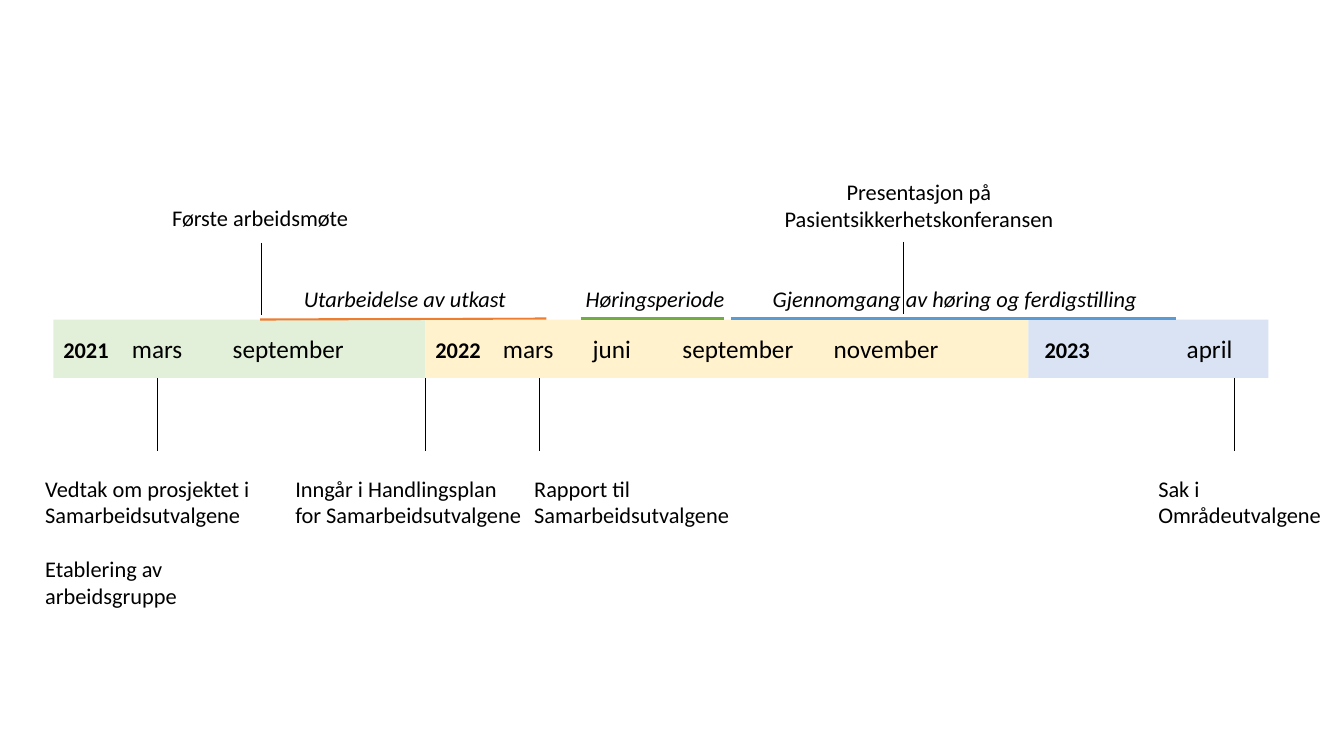
"""Build a project timeline slide running from 2021 to 2023."""
from dataclasses import dataclass
from typing import Optional

from lxml.etree import SubElement
from pptx import Presentation
from pptx.dml.color import RGBColor
from pptx.enum.shapes import MSO_CONNECTOR as Connector, MSO_SHAPE as Shape
from pptx.enum.text import MSO_ANCHOR as Anchor, PP_ALIGN as Align
from pptx.oxml.ns import qn
from pptx.slide import Slide
from pptx.util import Inches, Pt

BLACK = RGBColor(0x00, 0x00, 0x00)
WHITE = RGBColor(0xFF, 0xFF, 0xFF)
PALE_GREEN = RGBColor(0xE2, 0xF0, 0xD9)
PALE_YELLOW = RGBColor(0xFF, 0xF2, 0xCC)
PALE_BLUE = RGBColor(0xDA, 0xE3, 0xF3)
ORANGE = RGBColor(0xED, 0x7D, 0x31)
GREEN = RGBColor(0x70, 0xAD, 0x47)
BLUE = RGBColor(0x5B, 0x9B, 0xD5)

FONT = "Calibri"
BAND_TOP, BAND_HEIGHT = 3.17, 0.58
BAND_BOTTOM = BAND_TOP + BAND_HEIGHT
TICK_LENGTH = 0.72
PHASE_TOP, PHASE_LINE_Y = 2.78, 3.16
BELOW_TOP = 4.66


@dataclass(frozen=True)
class Year:
    name: str
    left: float
    width: float
    fill: RGBColor
    months: dict[str, float]
    inset: float = 0.1


@dataclass(frozen=True)
class Label:
    paragraphs: tuple[str, ...]
    left: float
    top: float
    width: float
    height: float
    align: Align = Align.LEFT
    italic: bool = False
    gap: float = 0
    fill: Optional[RGBColor] = None


@dataclass(frozen=True)
class Rule:
    start: tuple[float, float]
    end: tuple[float, float]
    color: RGBColor = BLACK
    weight: float = 0.5


YEARS = [
    Year("2021", 0.53, 3.69, PALE_GREEN, {"mars": 0.68, "september": 1.68}),
    Year("2022", 4.22, 5.98, PALE_YELLOW,
         {"mars": 0.67, "juni": 1.56, "september": 2.45, "november": 3.95}),
    Year("2023", 10.2, 2.38, PALE_BLUE, {"april": 1.41}, inset=0.16),
]

MILESTONES = [
    Label(("Vedtak\u00a0om prosjektet i Samarbeidsutvalgene", "Etablering av arbeidsgruppe"),
          0.35, BELOW_TOP, 2.29, 1.45, gap=19.2),
    Label(("Inngår i Handlingsplan \vfor Samarbeidsutvalgene",), 2.83, BELOW_TOP, 2.52, 0.91),
    Label(("Rapport til", "Samarbeidsutvalgene"), 5.2, BELOW_TOP, 2.43, 0.64),
    Label(("Sak i Områdeutvalgene",), 11.39, BELOW_TOP, 1.84, 0.64),
    Label(("Presentasjon på Pasientsikkerhetskonferansen",), 7.63, 1.72, 2.97, 0.64, Align.CENTER),
    Label(("Første arbeidsmøte",), 1.54, 1.98, 2.08, 0.37, Align.CENTER),
]

TICKS = [
    Rule((x, top), (x, top + TICK_LENGTH))
    for x, top in [(1.56, BAND_BOTTOM), (4.22, BAND_BOTTOM), (5.35, BAND_BOTTOM),
                   (12.24, BAND_BOTTOM), (2.59, 2.41), (8.96, 2.4)]
]

PHASE_LINES = [
    Rule((2.58, BAND_TOP), (5.42, PHASE_LINE_Y), ORANGE, 1.5),
    Rule((5.76, PHASE_LINE_Y), (7.18, PHASE_LINE_Y), GREEN, 1.5),
    Rule((7.25, PHASE_LINE_Y), (11.66, PHASE_LINE_Y), BLUE, 1.5),
]

PHASES = [
    Label(("Utarbeidelse\u00a0av utkast",), 2.74, PHASE_TOP, 2.55, 0.37, Align.CENTER, True, fill=WHITE),
    Label(("Høringsperiode",), 5.71, PHASE_TOP, 1.91, 0.37, italic=True),
    Label(("Gjennomgang av høring og ferdigstilling",), 7.06, PHASE_TOP, 4.82, 0.37, Align.CENTER, True),
]


def draw_year(slide: Slide, year: Year) -> None:
    band = slide.shapes.add_shape(Shape.RECTANGLE, Inches(year.left), Inches(BAND_TOP),
                                  Inches(year.width), Inches(BAND_HEIGHT))
    band.shadow.inherit = False
    band.fill.solid()
    band.fill.fore_color.rgb = year.fill
    band.line.fill.background()
    frame = band.text_frame
    frame.word_wrap = True
    frame.vertical_anchor = Anchor.MIDDLE
    frame.margin_left = Inches(year.inset)
    paragraph = frame.paragraphs[0]
    paragraph.alignment = Align.LEFT
    paragraph.font.name = FONT
    paragraph.font.color.rgb = BLACK
    tab_stops = SubElement(paragraph._p.get_or_add_pPr(), qn("a:tabLst"))
    paragraph._p.pPr.insert(0, tab_stops)
    for position in year.months.values():
        SubElement(tab_stops, qn("a:tab"), pos=str(Inches(position)), algn="l")
    months = "".join(f"\t{month}" for month in year.months)
    for text, size, bold in [(year.name, 16, True), (months, 18, False)]:
        run = paragraph.add_run()
        run.text = text
        run.font.size = Pt(size)
        run.font.bold = bold


def draw_label(slide: Slide, label: Label) -> None:
    box = slide.shapes.add_textbox(Inches(label.left), Inches(label.top),
                                   Inches(label.width), Inches(label.height))
    if label.fill is not None:
        box.fill.solid()
        box.fill.fore_color.rgb = label.fill
    frame = box.text_frame
    frame.word_wrap = True
    for index, text in enumerate(label.paragraphs):
        paragraph = frame.add_paragraph() if index else frame.paragraphs[0]
        paragraph.text = text
        paragraph.alignment = label.align
        paragraph.space_after = Pt(label.gap)
        paragraph.font.name = FONT
        paragraph.font.size = Pt(16)
        paragraph.font.italic = label.italic
        paragraph.font.color.rgb = BLACK


def draw_rule(slide: Slide, rule: Rule) -> None:
    line = slide.shapes.add_connector(Connector.STRAIGHT, *map(Inches, rule.start + rule.end))
    line.line.color.rgb = rule.color
    line.line.width = Pt(rule.weight)
    SubElement(line._element.spPr, qn("a:effectLst"))


def main() -> None:
    presentation = Presentation()
    presentation.slide_width = Inches(13.33)
    presentation.slide_height = Inches(7.5)
    slide = presentation.slides.add_slide(presentation.slide_layouts[6])
    for year in YEARS:
        draw_year(slide, year)
    for milestone in MILESTONES:
        draw_label(slide, milestone)
    for rule in TICKS + PHASE_LINES:
        draw_rule(slide, rule)
    for phase in PHASES:
        draw_label(slide, phase)
    presentation.save("out.pptx")


if __name__ == "__main__":
    main()
